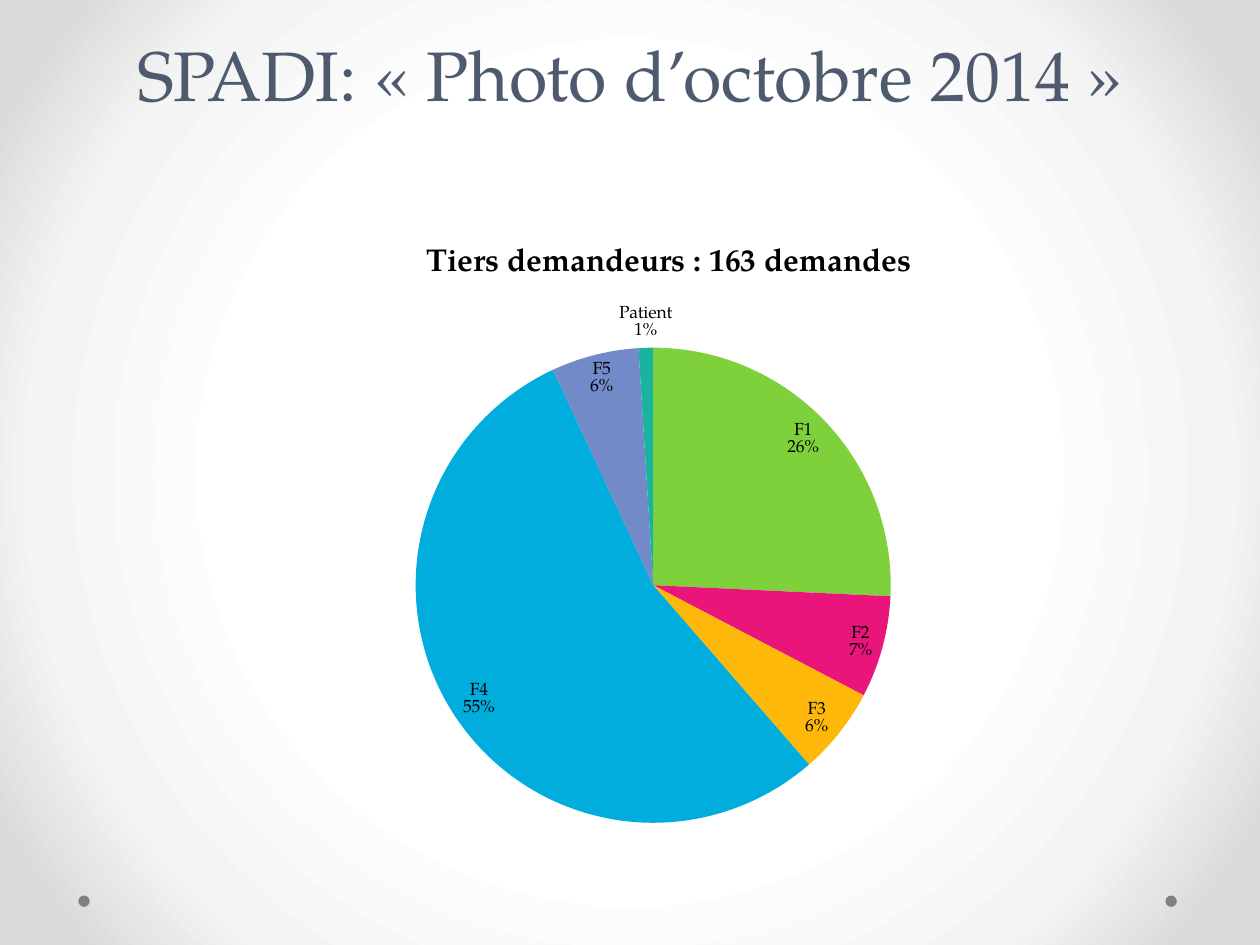
import pptx
import pptx.util
import pptx.chart.data
import pptx.dml.color
import pptx.enum.chart
import pptx.enum.shapes
import pptx.enum.text
import pptx.oxml
import pptx.oxml.ns

Pt = pptx.util.Pt
FONT = "TeX Gyre Pagella"
COLORS = {
    "title": "4E5B6F", "text": "000000", "dot": "808080",
    "F1": "7FD13B", "F2": "EA157A", "F3": "FEB80A",
    "F4": "00ADDC", "F5": "738AC8", "Patient": "1AB39F",
}
SHARES = {"F1": 26, "F2": 7, "F3": 6, "F4": 55, "F5": 6, "Patient": 1}
BACKGROUND_STOPS = [(50, "FFFFFF"), (76, "F4F4F4"), (92, "DADADA")]


def rgb(name):
    return pptx.dml.color.RGBColor.from_string(COLORS[name])


def style_font(font, size, color, bold=False):
    font.name = FONT
    font.size = Pt(size)
    font.bold = bold
    font.color.rgb = rgb(color)


prs = pptx.Presentation()
prs.slide_width, prs.slide_height = Pt(720), Pt(540)
s = prs.slides.add_slide(prs.slide_layouts[6])

# Radial background
s.background.fill.solid()
solid = s.element.find(".//" + pptx.oxml.ns.qn("a:solidFill"))
stops = "".join(
    f'<a:gs pos="{pos * 1000}"><a:srgbClr val="{color}"/></a:gs>'
    for pos, color in BACKGROUND_STOPS
)
gradient = pptx.oxml.parse_xml(
    f'<a:gradFill {pptx.oxml.ns.nsdecls("a")} rotWithShape="1">'
    f'<a:gsLst>{stops}</a:gsLst><a:path path="circle">'
    '<a:fillToRect l="50000" t="50000" r="50000" b="50000"/>'
    '</a:path></a:gradFill>'
)
solid.getparent().replace(solid, gradient)

# Corner dots
for x in (666, 44.75):
    sp = s.shapes.add_shape(pptx.enum.shapes.MSO_SHAPE.OVAL,
                            Pt(x), Pt(511.75), Pt(6.5), Pt(6.5))
    sp.shadow.inherit = False
    sp.fill.solid()
    sp.fill.fore_color.rgb = rgb("dot")
    sp.line.fill.background()

# Title
sp = s.shapes.add_textbox(Pt(36), Pt(0), Pt(648), Pt(126))
tf = sp.text_frame
tf.word_wrap = True
tf.vertical_anchor = pptx.enum.text.MSO_ANCHOR.TOP
tf.margin_top = Pt(8)
tf.text = "SPADI: «\u00a0Photo d’octobre 2014\u00a0»".replace("\u00a0", " ")
p = tf.paragraphs[0]
p.alignment = pptx.enum.text.PP_ALIGN.CENTER
p.line_spacing = Pt(58)
style_font(p.runs[0].font, 40, "title")

# Pie chart
data = pptx.chart.data.CategoryChartData()
data.categories = list(SHARES)
data.add_series("Series 1", list(SHARES.values()))
chart = s.shapes.add_chart(pptx.enum.chart.XL_CHART_TYPE.PIE,
                           Pt(80.64), Pt(126), Pt(603.36), Pt(356.4), data).chart
style_font(chart.font, 10, "text")
chart.has_legend = False
chart.has_title = True
tf = chart.chart_title.text_frame
tf.text = "Tiers demandeurs : 163 demandes"
style_font(tf.paragraphs[0].runs[0].font, 18, "text", bold=True)

# Plot area position, as fractions of the chart
plot_area = chart.plots[0]._element.getparent()
for layout in plot_area.findall(pptx.oxml.ns.qn("c:layout")):
    plot_area.remove(layout)
places = "".join(f'<c:{tag} val="{val}"/>' for tag, val in [
    ("layoutTarget", "inner"), ("xMode", "edge"), ("yMode", "edge"),
    ("x", 0.26), ("y", 0.2), ("w", 0.45), ("h", 0.77)])
plot_area.insert(0, pptx.oxml.parse_xml(
    f'<c:layout {pptx.oxml.ns.nsdecls("c")}>'
    f'<c:manualLayout>{places}</c:manualLayout></c:layout>'))

# Slices and labels
plot = chart.plots[0]
plot.vary_by_categories = True
series = plot.series[0]
for i, name in enumerate(SHARES):
    point = series.points[i]
    point.format.fill.solid()
    point.format.fill.fore_color.rgb = rgb(name)
    point.format.line.fill.background()

plot.has_data_labels = True
labels = plot.data_labels
labels.show_category_name = True
labels.show_value = True
labels.number_format = '0"%"'
labels.number_format_is_linked = False
labels.position = pptx.enum.chart.XL_LABEL_POSITION.BEST_FIT
style_font(labels.font, 10, "text")
labels._element.append(pptx.oxml.parse_xml(
    f'<c:separator {pptx.oxml.ns.nsdecls("c")}>\n</c:separator>'))
leader = labels._element.find(pptx.oxml.ns.qn("c:showLeaderLines"))
if leader is not None:
    labels._element.append(leader)

prs.save("out.pptx")
